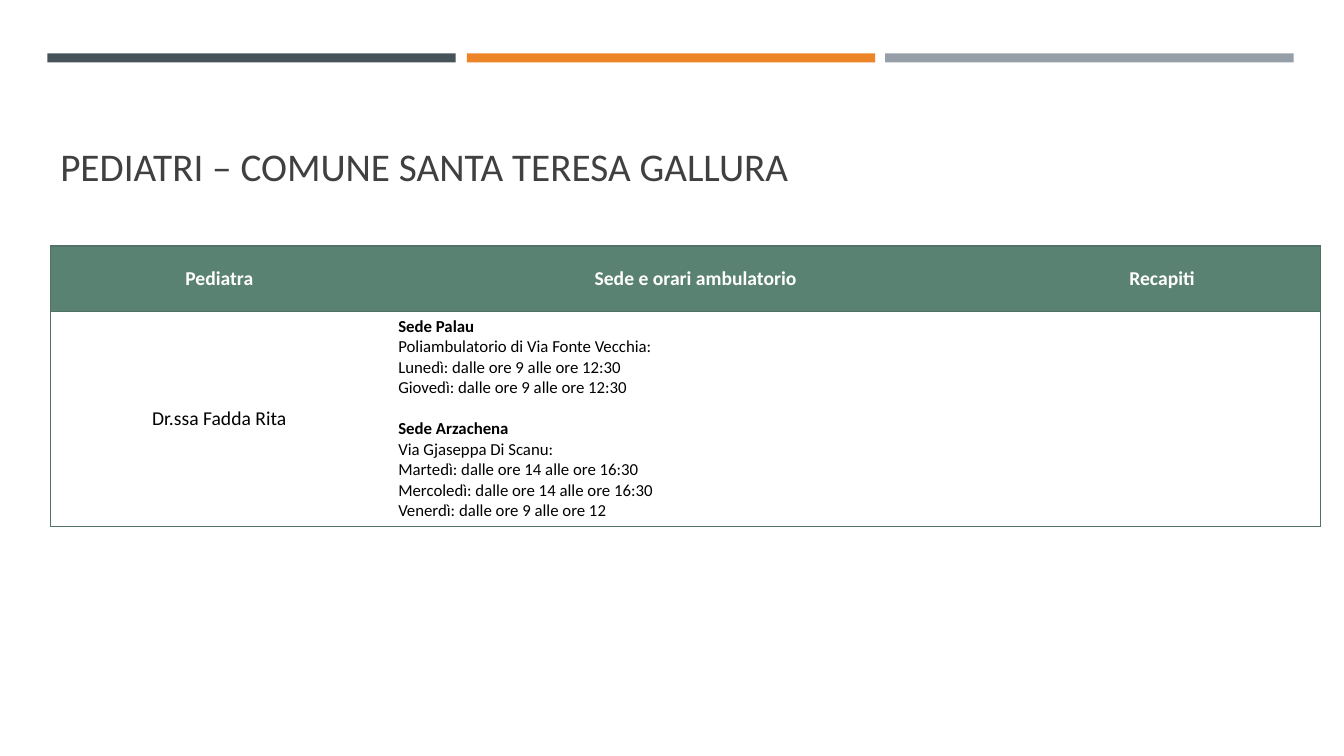
from lxml.etree import SubElement
from pptx import Presentation
from pptx.dml.color import RGBColor
from pptx.enum.shapes import MSO_SHAPE
from pptx.enum.text import MSO_ANCHOR, PP_ALIGN
from pptx.oxml.ns import qn
from pptx.util import Pt

PX = 9144
HUES = {
    "slate": "465359", "orange": "ED8428", "gray": "969FA7",
    "title": "404040", "head": "5A8272", "edge": "517366",
    "white": "FFFFFF", "black": "000000",
}
PLAIN = "{2D5ABB26-0587-4C30-8999-92F81FD0307C}"
COLS = [335, 295, 315, 315]
ROWS = [65, 213]
HEADS = {0: "Pediatra", 1: "Sede e orari ambulatorio", 3: "Recapiti"}
SITES = [
    ["Sede Palau",
     "Poliambulatorio di Via Fonte Vecchia:",
     "Lunedì: dalle ore 9 alle ore 12:30",
     "Giovedì: dalle ore 9 alle ore 12:30"],
    ["Sede Arzachena",
     "Via Gjaseppa Di Scanu:",
     "Martedì: dalle ore 14 alle ore 16:30",
     "Mercoledì: dalle ore 14 alle ore 16:30",
     "Venerdì: dalle ore 9 alle ore 12"],
]


class Deck:
    font = "Calibri"

    def __init__(self, wide, high):
        self.file = Presentation()
        self.file.slide_width = wide * PX
        self.file.slide_height = high * PX
        self.slide = self.file.slides.add_slide(self.file.slide_layouts[6])

    def hue(self, name):
        return RGBColor.from_string(HUES[name])

    def bar(self, x, y, w, h, hue):
        box = self.slide.shapes.add_shape(
            MSO_SHAPE.RECTANGLE, x * PX, y * PX, w * PX, h * PX)
        box.shadow.inherit = False
        box.fill.solid()
        box.fill.fore_color.rgb = self.hue(hue)
        box.line.fill.background()

    def run(self, para, text, size, hue, bold=False):
        run = para.add_run()
        run.text = text
        run.font.name = self.font
        run.font.size = Pt(size)
        run.font.bold = bold
        run.font.color.rgb = self.hue(hue)

    def title(self, x, y, w, h, text):
        box = self.slide.shapes.add_textbox(x * PX, y * PX, w * PX, h * PX)
        frame = box.text_frame
        frame.word_wrap = True
        frame.vertical_anchor = MSO_ANCHOR.BOTTOM
        para = frame.paragraphs[0]
        para.line_spacing = 0.9
        self.run(para, text, 28, "title")

    def table(self, x, y, cols, rows):
        frame = self.slide.shapes.add_table(
            len(rows), len(cols), x * PX, y * PX, sum(cols) * PX, sum(rows) * PX)
        grid = frame.table
        grid._tbl.tblPr.find(qn("a:tableStyleId")).text = PLAIN
        for col, wide in zip(grid.columns, cols):
            col.width = wide * PX
        for row, high in zip(grid.rows, rows):
            row.height = high * PX
        for r in range(len(rows)):
            for c in range(len(cols)):
                cell = grid.cell(r, c)
                cell.vertical_anchor = MSO_ANCHOR.MIDDLE
                self.edge(cell, {
                    "L": c == 0, "R": c == len(cols) - 1,
                    "T": True, "B": True})
                cell.fill.solid()
                cell.fill.fore_color.rgb = self.hue("white" if r else "head")
        return grid

    def edge(self, cell, sides):
        prop = cell._tc.get_or_add_tcPr()
        for side, shown in sides.items():
            if shown:
                line = SubElement(prop, qn("a:ln" + side), w=str(Pt(1)))
                fill = SubElement(line, qn("a:solidFill"))
                SubElement(fill, qn("a:srgbClr"), val=HUES["edge"])

    def label(self, cell, text, hue, bold=False):
        para = cell.text_frame.paragraphs[0]
        para.alignment = PP_ALIGN.CENTER
        self.run(para, text, 14, hue, bold)

    def sites(self, cell, groups):
        frame = cell.text_frame
        for g, group in enumerate(groups):
            for n, text in enumerate(group):
                first = g == n == 0
                para = frame.paragraphs[0] if first else frame.add_paragraph()
                if g and n == 0:
                    para.space_before = Pt(14.6)
                self.run(para, text, 12, "black", n == 0)


def main():
    deck = Deck(1333, 750)
    for x, hue in zip((47, 463, 878), ("slate", "orange", "gray")):
        deck.bar(x, 53, 405, 9, hue)
    deck.title(50, 77, 1233, 116, "PEDIATRI – COMUNE SANTA TERESA GALLURA")
    grid = deck.table(50, 244, COLS, ROWS)
    grid.cell(0, 1).merge(grid.cell(0, 2))
    for col, text in HEADS.items():
        deck.label(grid.cell(0, col), text, "white", True)
    deck.label(grid.cell(1, 0), "Dr.ssa Fadda Rita", "black")
    deck.sites(grid.cell(1, 1), SITES)
    deck.file.save("out.pptx")


if __name__ == "__main__":
    main()
